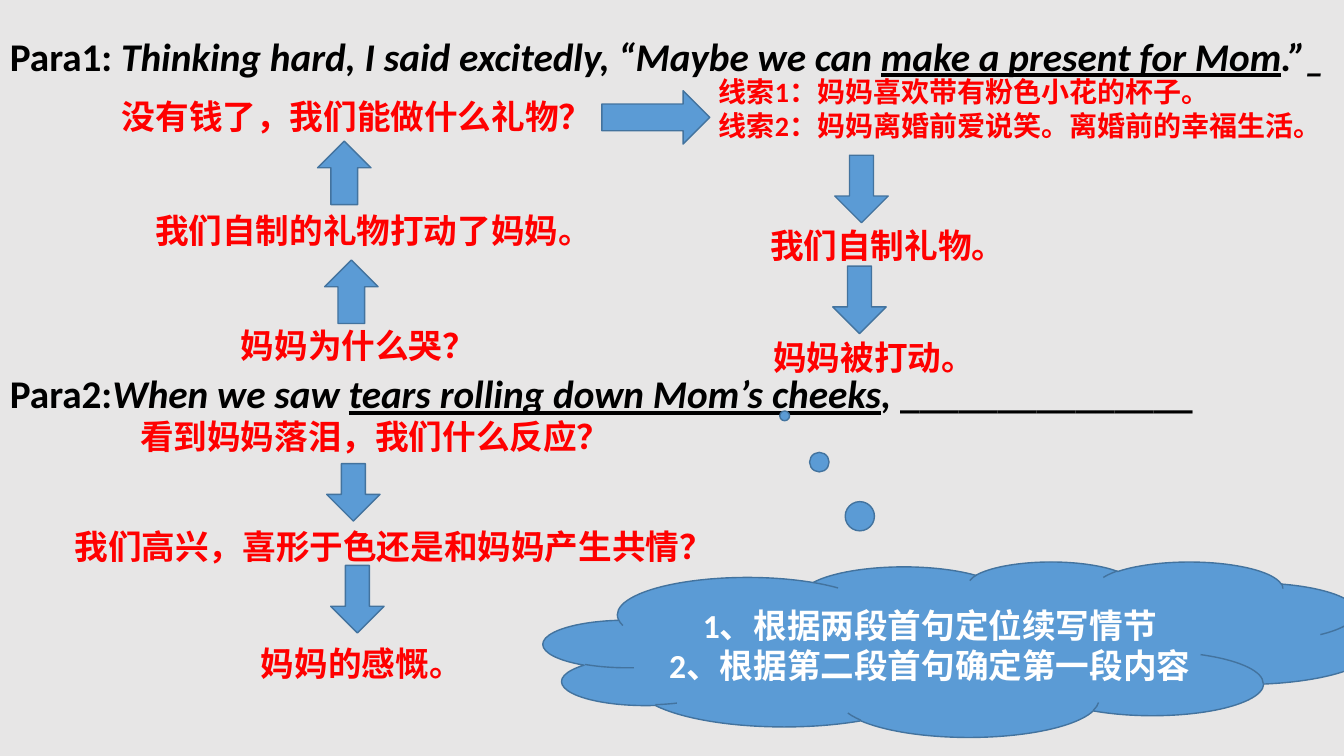
import pptx
import pptx.dml.color
import pptx.enum.shapes
import pptx.enum.text
import pptx.util

Inches = pptx.util.Inches
Pt = pptx.util.Pt
SHAPE = pptx.enum.shapes.MSO_SHAPE
PP_ALIGN = pptx.enum.text.PP_ALIGN
AUTO_SIZE = pptx.enum.text.MSO_AUTO_SIZE
ANCHOR = pptx.enum.text.MSO_ANCHOR

ITALIC = {"italic": True}
KEY_PHRASE = {"italic": True, "underline": True}


def rgb(value):
    return pptx.dml.color.RGBColor.from_string(value)


class StorySlide:
    font = "Calibri"
    black, red, white = "000000", "FF0000", "FFFFFF"
    blue, outline, background = "5B9BD5", "43739E", "E7E6E6"

    def __init__(self, prs):
        self.s = prs.slides.add_slide(prs.slide_layouts[6])
        fill = self.s.background.fill
        fill.solid()
        fill.fore_color.rgb = rgb(self.background)

    def run(self, p, text, size, color, **formats):
        r = p.add_run()
        r.text = text
        values = {"name": self.font, "size": Pt(size), "bold": True, **formats}
        for name, value in values.items():
            setattr(r.font, name, value)
        r.font.color.rgb = rgb(color)

    def paragraphs(self, tf, lines, size, color, align=None):
        for i, line in enumerate(lines):
            p = tf.add_paragraph() if i else tf.paragraphs[0]
            p.alignment = align
            self.run(p, line, size, color)

    def heading(self, top, runs):
        """Full-width opening sentence made of (text, formats) runs."""
        sp = self.s.shapes.add_textbox(0, Inches(top), Inches(13.33), Inches(0.53))
        tf = sp.text_frame
        tf.word_wrap = True
        p = tf.paragraphs[0]
        p.line_spacing = 0.9
        for text, formats in runs:
            self.run(p, text, 28, self.black, **formats)

    def note(self, left, top, width, lines, height=0.5, size=24):
        """Red plot point on unwrapped lines."""
        sp = self.s.shapes.add_textbox(*map(Inches, (left, top, width, height)))
        tf = sp.text_frame
        tf.word_wrap = False
        tf.auto_size = AUTO_SIZE.SHAPE_TO_FIT_TEXT
        self.paragraphs(tf, lines, size, self.red)

    def shape(self, kind, left, top, width, height, adjustments=()):
        sp = self.s.shapes.add_shape(kind, *map(Inches, (left, top, width, height)))
        sp.shadow.inherit = False
        for i, value in enumerate(adjustments):
            sp.adjustments[i] = value
        sp.fill.solid()
        sp.fill.fore_color.rgb = rgb(self.blue)
        sp.line.color.rgb = rgb(self.outline)
        sp.line.width = Pt(1)
        return sp

    def cloud(self, left, top, width, height, pointer, lines):
        sp = self.shape(SHAPE.CLOUD_CALLOUT, left, top, width, height, pointer)
        tf = sp.text_frame
        tf.word_wrap = True
        tf.vertical_anchor = ANCHOR.MIDDLE
        self.paragraphs(tf, lines, 24, self.white, PP_ALIGN.CENTER)


def main():
    prs = pptx.Presentation()
    prs.slide_width, prs.slide_height = Inches(13.33), Inches(7.5)
    story = StorySlide(prs)

    story.heading(0.32, [
        ("Para1: ", {}),
        ("Thinking hard, I said excitedly, “Maybe we can ", ITALIC),
        ("make a present for Mom", KEY_PHRASE),
        (".”_", ITALIC),
    ])
    story.heading(3.67, [
        ("Para2:", {}),
        ("When we saw ", ITALIC),
        ("tears rolling down Mom’s cheeks", KEY_PHRASE),
        (", ", ITALIC),
        ("_______________", {}),
    ])

    for left, top, width, text in [
        (2.29, 3.17, 2.56, "妈妈为什么哭？"),
        (1.44, 2.03, 4.58, "我们自制的礼物打动了妈妈。"),
        (1.11, 0.9, 4.91, "没有钱了，我们能做什么礼物？"),
        (7.54, 2.18, 2.56, "我们自制礼物。"),
        (7.57, 3.29, 2.22, "妈妈被打动。"),
        (1.29, 4.08, 4.91, "看到妈妈落泪，我们什么反应？"),
        (0.64, 5.17, 6.6, "我们高兴，喜形于色还是和妈妈产生共情？"),
        (2.49, 6.33, 2.22, "妈妈的感慨。"),
    ]:
        story.note(left, top, width, [text])
    story.note(7.03, 0.69, 6.23, [
        "线索1：妈妈喜欢带有粉色小花的杯子。",
        "线索2：妈妈离婚前爱说笑。离婚前的幸福生活。",
    ], height=0.77, size=20)

    for left, top in [(3.22, 2.58), (3.15, 1.4)]:
        story.shape(SHAPE.UP_ARROW, left, top, 0.53, 0.63)
    story.shape(SHAPE.RIGHT_ARROW, 5.97, 0.9, 1.07, 0.53)
    for left, top, height in [(8.28, 1.54, 0.67), (8.26, 2.64, 0.67),
                              (3.24, 4.6, 0.57), (3.28, 5.61, 0.67)]:
        story.shape(SHAPE.DOWN_ARROW, left, top, 0.53, height, (0.45, 0.5))

    story.cloud(5.39, 5.57, 8.25, 1.74, (-0.21, -1.33), [
        "1、根据两段首句定位续写情节",
        "2、根据第二段首句确定第一段内容",
    ])
    prs.save("out.pptx")


if __name__ == "__main__":
    main()
